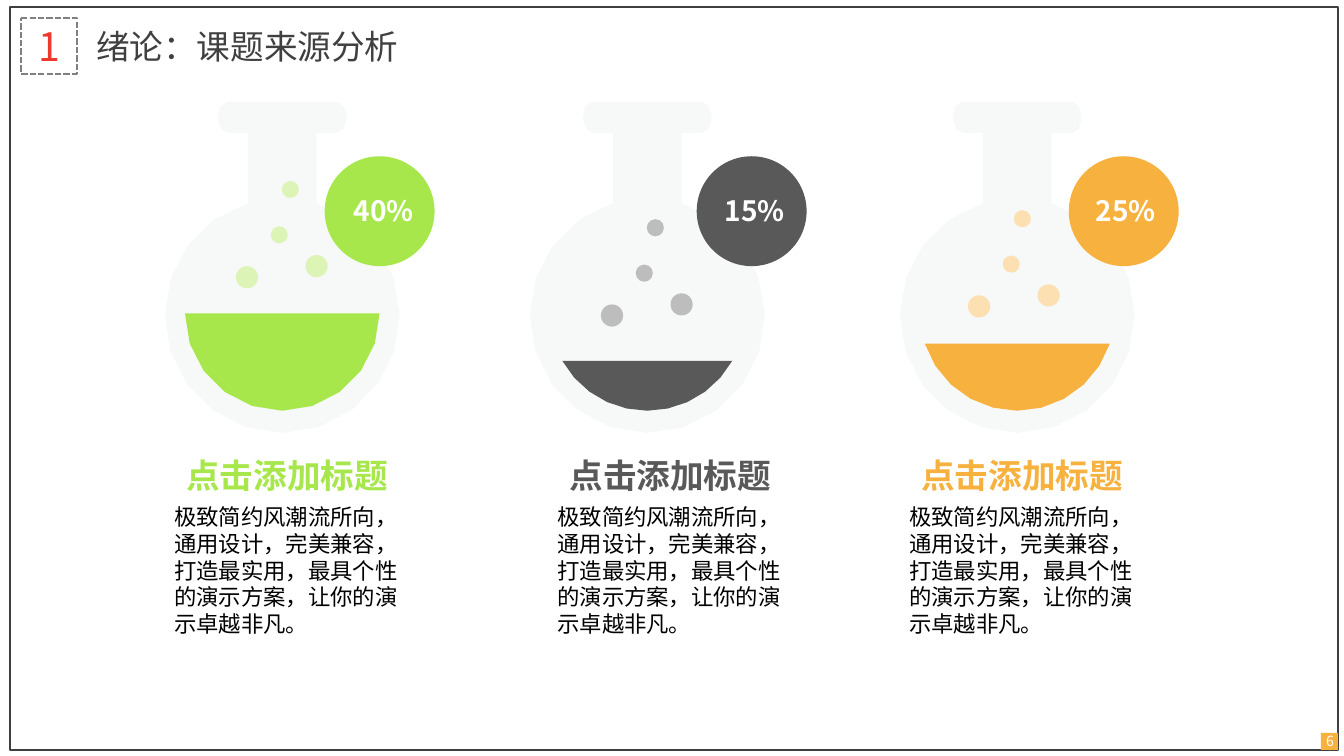
from math import acos, asin, cos, degrees, radians, sin

from lxml.etree import SubElement
from pptx import Presentation
from pptx.dml.color import RGBColor
from pptx.enum.dml import MSO_LINE
from pptx.enum.shapes import MSO_SHAPE as Preset
from pptx.enum.text import MSO_ANCHOR as Anchor, PP_ALIGN as Align
from pptx.oxml.ns import qn
from pptx.util import Inches, Pt

DARK = RGBColor(0x40, 0x40, 0x40)
GRAY = RGBColor(0x80, 0x80, 0x80)
RED = RGBColor(0xED, 0x38, 0x2D)
BLACK = RGBColor(0x00, 0x00, 0x00)
WHITE = RGBColor(0xFF, 0xFF, 0xFF)
GLASS = RGBColor(0xF7, 0xF8, 0xF8)
GREEN = RGBColor(0xA8, 0xE7, 0x4B)
PALE_GREEN = RGBColor(0xDC, 0xF5, 0xB7)
CHARCOAL = RGBColor(0x59, 0x59, 0x59)
PALE_GRAY = RGBColor(0xBD, 0xBD, 0xBD)
ORANGE = RGBColor(0xF7, 0xB1, 0x3F)
PALE_ORANGE = RGBColor(0xFC, 0xE0, 0xB2)

FONT = "Noto Sans CJK SC"
HEADING_FONT = "TeX Gyre Adventor"
BODY = "极致简约风潮流所向，通用设计，完美兼容，打造最实用，最具个性的演示方案，让你的演示卓越非凡。"

# Flask geometry, as offsets from the centre line
LIP_HALF, LIP_TOP, LIP_BOTTOM = 0.64, 1.01, 1.32
LIP_CORNER = 0.1
NECK_HALF = 0.34
BULB_Y, BULB_RADIUS = 3.13, 1.165
LIQUID_Y, LIQUID_RADIUS = 3.11, 0.965
BUBBLES = [(-0.35, 2.75, 0.22), (0.34, 2.64, 0.22), (-0.03, 2.33, 0.17), (0.08, 1.88, 0.17)]

# centre, liquid level, bubble shift, badge left, colour, bubble colour
FLASKS = [
    (2.8, 3.11, (0, 0), 3.22, GREEN, PALE_GREEN),
    (10.09, 3.41, (-0.03, 0.29), 10.6, ORANGE, PALE_ORANGE),
    (6.42, 3.58, (0, 0.38), 6.91, CHARCOAL, PALE_GRAY),
]
BADGE_TOP, BADGE_SIZE = 1.55, 1.09
CAPTIONS = [(1.63, GREEN), (5.43, CHARCOAL), (8.92, ORANGE)]
PERCENTAGES = ["40%", "15%", "25%"]
PERCENT_LEFT, PERCENT_STEP = 3.41, 3.68


def arc(x, y, radius_x, radius_y, start, end, steps):
    """Points along an ellipse; degrees run clockwise from the right."""
    angles = [radians(start + (end - start) * i / steps) for i in range(steps + 1)]
    return [(Inches(x + radius_x * cos(a)), Inches(y + radius_y * sin(a))) for a in angles]


def write(shape, text, size, color, font=FONT, bold=False, align=Align.LEFT,
          anchor=Anchor.TOP, wrap=True):
    frame = shape.text_frame
    frame.word_wrap = wrap
    frame.vertical_anchor = anchor
    paragraph = frame.paragraphs[0]
    paragraph.alignment = align
    run = paragraph.add_run()
    run.text = text
    run.font.size = Pt(size)
    run.font.bold = bold
    run.font.color.rgb = color
    run.font.name = font
    SubElement(run.font._element, qn("a:ea")).set("typeface", FONT)


presentation = Presentation()
presentation.slide_width = Inches(13.33)
presentation.slide_height = Inches(7.5)
slide = presentation.slides.add_slide(presentation.slide_layouts[6])
shapes = slide.shapes

# Frame and header
border = shapes.add_shape(Preset.RECTANGLE, Inches(0.1), Inches(0.07), Inches(13.17), Inches(7.37))
border.shadow.inherit = False
border.fill.background()
border.line.color.rgb = DARK
border.line.width = Pt(1)

number = shapes.add_shape(Preset.ROUNDED_RECTANGLE, Inches(0.21), Inches(0.18), Inches(0.55), Inches(0.55))
number.adjustments[0] = 0
number.shadow.inherit = False
number.fill.background()
number.line.color.rgb = GRAY
number.line.width = Pt(1.5)
number.line.dash_style = MSO_LINE.SQUARE_DOT
frame = number.text_frame
frame.margin_left = frame.margin_right = frame.margin_top = frame.margin_bottom = 0
write(number, "1", 28, RED, align=Align.CENTER, anchor=Anchor.MIDDLE)

header = shapes.add_shape(Preset.ROUNDED_RECTANGLE, Inches(0.84), Inches(0.18), Inches(3.59), Inches(0.55))
header.adjustments[0] = 0.09
header.shadow.inherit = False
header.fill.background()
header.line.fill.background()
write(header, "绪论：课题来源分析", 24, DARK, anchor=Anchor.MIDDLE)

# Page number
page_mark = shapes.add_shape(Preset.RECTANGLE, Inches(13.1), Inches(7.27), Inches(0.17), Inches(0.17))
page_mark.shadow.inherit = False
page_mark.fill.solid()
page_mark.fill.fore_color.rgb = ORANGE
page_mark.line.fill.background()
page_number = shapes.add_textbox(Inches(12.97), Inches(7.27), Inches(0.44), Inches(0.17))
write(page_number, "6", 10, WHITE, align=Align.CENTER, anchor=Anchor.MIDDLE)

# Flasks with their bubbles and badges
lip_middle = (LIP_TOP + LIP_BOTTOM) / 2
lip_radius = (LIP_BOTTOM - LIP_TOP) / 2
corner = LIP_HALF - LIP_CORNER
neck_angle = degrees(asin(NECK_HALF / BULB_RADIUS))

for center, level, shift, badge_left, color, pale in FLASKS:
    glass = (
        arc(center, BULB_Y, BULB_RADIUS, BULB_RADIUS, -90 + neck_angle, 270 - neck_angle, 18)
        + [(Inches(center - NECK_HALF), Inches(LIP_BOTTOM))]
        + arc(center - corner, lip_middle, LIP_CORNER, lip_radius, 90, 270, 4)
        + arc(center + corner, lip_middle, LIP_CORNER, lip_radius, -90, 90, 4)
        + [(Inches(center + NECK_HALF), Inches(LIP_BOTTOM))]
    )
    spread = degrees(acos((level - LIQUID_Y) / LIQUID_RADIUS))
    liquid = arc(center, LIQUID_Y, LIQUID_RADIUS, LIQUID_RADIUS, 90 - spread, 90 + spread, 10)

    filled = []
    for points, fill in ((glass, GLASS), (liquid, color)):
        builder = shapes.build_freeform(*points[0], scale=1.0)
        builder.add_line_segments(points[1:], close=True)
        filled.append((builder.convert_to_shape(), fill))

    circles = [(center + x + shift[0] - size / 2, y + shift[1] - size / 2, size, pale)
               for x, y, size in BUBBLES]
    circles.append((badge_left, BADGE_TOP, BADGE_SIZE, color))
    for left, top, size, fill in circles:
        circle = shapes.add_shape(Preset.OVAL, Inches(left), Inches(top), Inches(size), Inches(size))
        filled.append((circle, fill))

    for shape, fill in filled:
        shape.shadow.inherit = False
        shape.fill.solid()
        shape.fill.fore_color.rgb = fill
        shape.line.fill.background()

# Captions under the flasks
for left, color in CAPTIONS:
    body = shapes.add_textbox(Inches(left), Inches(4.94), Inches(2.57), Inches(1.45))
    write(body, BODY, 16, BLACK)
    heading = shapes.add_textbox(Inches(left + 0.12), Inches(4.46), Inches(2.22), Inches(0.5))
    write(heading, "点击添加标题", 24, color, font=HEADING_FONT, bold=True, wrap=False)

# Percentages on the badges
for index, percent in enumerate(PERCENTAGES):
    left = PERCENT_LEFT + index * PERCENT_STEP
    label = shapes.add_textbox(Inches(left), Inches(1.87), Inches(0.82), Inches(0.44))
    write(label, percent, 20, WHITE, bold=True)

presentation.save("out.pptx")
